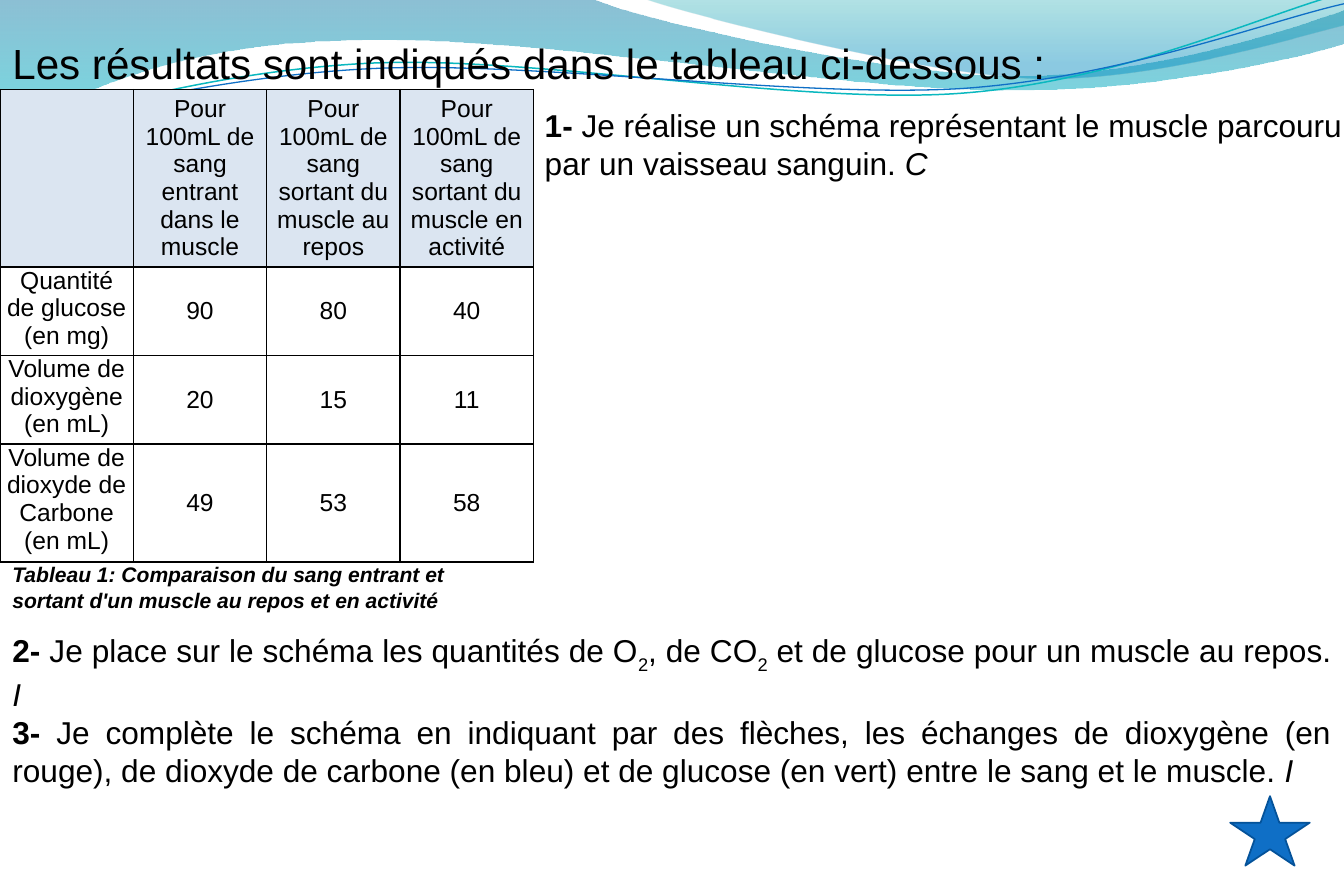
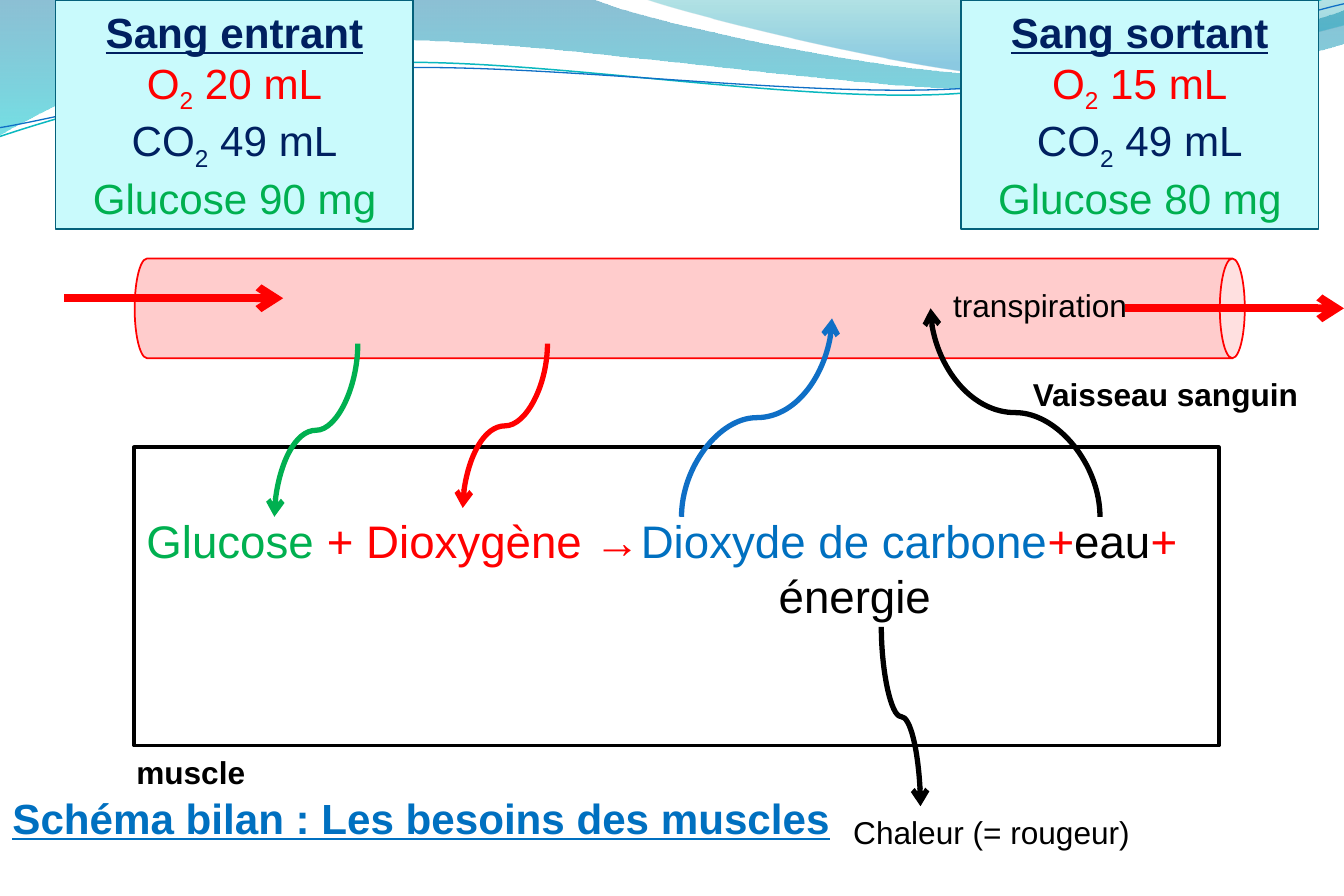
from pptx import Presentation
from pptx import util as u
from pptx.dml.color import RGBColor
from pptx.enum import shapes as kinds, text as te
from pptx.oxml import parse_xml
from pptx.oxml.ns import nsdecls, qn

BLACK = RGBColor(0, 0, 0)
RED = RGBColor(0xFF, 0, 0)
GREEN = RGBColor(0, 0xB0, 0x50)
BLUE = RGBColor(0, 0x70, 0xC0)
NAVY = RGBColor(0, 0x20, 0x60)
ACCENT = RGBColor(0x0F, 0x6F, 0xC6)
ACCENT_EDGE = RGBColor(0x04, 0x52, 0x99)
TEAL = RGBColor(0x0A, 0xB8, 0xBF)
TEAL_EDGE = RGBColor(0x04, 0x61, 0x7B)
PALE_CYAN = RGBColor(0xC9, 0xFA, 0xFC)
PINK = RGBColor(0xFF, 0xCC, 0xCC)
HEADER = RGBColor(0xDB, 0xE5, 0xF1)
FONT = "Arial"
LEFT, CENTER, JUSTIFY = te.PP_ALIGN.LEFT, te.PP_ALIGN.CENTER, te.PP_ALIGN.JUSTIFY
TOP, MIDDLE = te.MSO_ANCHOR.TOP, te.MSO_ANCHOR.MIDDLE
BOX = kinds.MSO_SHAPE.RECTANGLE

# Shared waves: start point, then straight (1 point) or cubic (3 points) pieces
BANDS = [
    ((0, 0), [[(4.68, -0.01)],
              [(5.06, 0.16), (7.05, 0.6), (8.06, 0.6)],
              [(9.07, 0.6), (10.19, 0.24), (10.63, 0.08)],
              [(10.64, 0.34)],
              [(10.45, 0.41), (9.25, 0.72), (7.93, 0.71)],
              [(6.61, 0.71), (4.06, 0.26), (2.74, 0.32)],
              [(1.37, 0.34), (0.49, 0.78), (-0.01, 1.07)],
              [(0, 0)]],
     [(0, RGBColor(0, 0x74, 0xA1), 45), (1, RGBColor(0, 0xC6, 0xCF), 55)]),
    ((5.09, -0.01), [[(5.41, 0.11), (7.25, 0.58), (8.17, 0.62)],
                     [(9.09, 0.65), (10.22, 0.3), (10.63, 0.2)],
                     [(10.63, 0)],
                     [(5.09, -0.01)]],
     [(0, RGBColor(0, 0xA1, 0xA9), 30), (0.8, RGBColor(0, 0x8B, 0xBF), 45)]),
]
STRANDS = [
    ((0, 1.08), [[(0.51, 0.91), (1.68, 0.56), (2.94, 0.5)],
                 [(4.2, 0.44), (6.3, 0.83), (7.58, 0.74)],
                 [(8.85, 0.65), (9.98, 0.12), (10.61, -0.05)]], TEAL, 0.85),
    ((0, 1.01), [[(0.5, 0.93), (1.74, 0.59), (3.01, 0.54)],
                 [(4.28, 0.49), (6.35, 0.78), (7.62, 0.7)],
                 [(8.89, 0.61), (10.01, 0.17), (10.63, 0.03)]], ACCENT, 0.75),
]

# Slide 1 content; a run is a string or (string, format)
BOLD, ITALIC = {"bold": True}, {"italic": True}
SUB2 = ("2", {"baseline": -30})
RESULTS = [
    ["", "Pour 100mL de sang entrant dans le muscle",
     "Pour 100mL de sang sortant du muscle au repos",
     "Pour 100mL de sang sortant du muscle en activité"],
    ["Quantité de glucose (en mg)", "90", "80", "40"],
    ["Volume de dioxygène (en mL)", "20", "15", "11"],
    ["Volume de dioxyde de Carbone (en mL)", "49", "53", "58"],
]
ROW_HEIGHTS = [1.27, 0.63, 0.63, 0.85]
TASK_1 = [[("1-", BOLD), " Je réalise un schéma représentant le muscle parcouru "
           "par un vaisseau sanguin. ", ("C", ITALIC)]]
TASKS_2_3 = [
    [("2-", BOLD), " Je place sur le schéma les quantités de O", SUB2, ", de CO", SUB2,
     " et de glucose pour un muscle au repos. ", ("I", ITALIC)],
    [("3-", BOLD), " Je complète le schéma en indiquant par des flèches, les échanges de "
     "dioxygène (en rouge), de dioxyde de carbone (en bleu) et de glucose (en vert) entre "
     "le sang et le muscle. ", ("I", ITALIC)],
]

# Slide 2 content; "\n" is a line break
BLOOD = [  # left, heading, O2, CO2, glucose
    (0.44, "Sang entrant", 20, 49, 90),
    (7.6, "Sang sortant", 15, 49, 80),
]
EQUATION = [
    [("Glucose ", {"color": GREEN}), ("+ Dioxygène →", {"color": RED}),
     ("Dioxyde de carbone", {"color": BLUE}), ("+", {"color": RED}), "eau",
     ("+", {"color": RED}), "\n", "énergie"],
]
FLOWS = [((0.51, 2.36), (2.24, 2.36)), ((8.9, 2.44), (10.63, 2.44))]
EXCHANGES = [
    ((2.83, 2.72), (2.17, 4.09), GREEN),
    ((4.33, 2.72), (3.66, 4.02), RED),
    ((5.39, 4.09), (6.58, 2.52), ACCENT),
    ((8.7, 4.09), (7.36, 2.44), BLACK),
    ((6.97, 4.96), (7.28, 6.38), BLACK),
]
LABELS = [
    ("Vaisseau sanguin", (8.07, 2.92, 2.32, 0.4), BOLD),
    ("transpiration", (7.44, 2.21, 1.59, 0.4), {}),
    ("Chaleur (= rougeur)", (6.65, 6.38, 2.41, 0.4), {}),
    ("Schéma bilan : Les besoins des muscles", (0, 6.22, 6.82, 0.5),
     {"size": 24, "color": BLUE, "bold": True, "underline": True}),
    ("muscle", (0.98, 5.91, 1.07, 0.4), BOLD),
]


def inches(values):
    return [u.Inches(v) for v in values]


def write(frame, paragraphs, align=LEFT, **base):
    """Fill a text frame; each run may override the base format."""
    if isinstance(paragraphs, str):
        paragraphs = [[paragraphs]]
    for i, runs in enumerate(paragraphs):
        para = frame.add_paragraph() if i else frame.paragraphs[0]
        para.alignment = align
        for item in runs:
            if item == "\n":
                para.add_line_break()
                continue
            words, extra = (item, {}) if isinstance(item, str) else item
            style = {"size": 18, "color": BLACK, **base, **extra}
            run = para.add_run()
            run.text = words
            font = run.font
            font.name, font.size = FONT, u.Pt(style["size"])
            font.color.rgb = style["color"]
            font.bold = style.get("bold", False)
            font.italic = style.get("italic", False)
            font.underline = style.get("underline", False)
            if "baseline" in style:
                run._r.get_or_add_rPr().set("baseline", str(style["baseline"] * 1000))


def add_text(slide, at, paragraphs, wrap=True, anchor=TOP, **style):
    frame = slide.shapes.add_textbox(*inches(at)).text_frame
    frame.word_wrap = wrap
    frame.vertical_anchor = anchor
    if not wrap:
        frame.auto_size = te.MSO_AUTO_SIZE.SHAPE_TO_FIT_TEXT
    write(frame, paragraphs, **style)


def paint(shape, fill, line, width=1):
    shape.shadow.inherit = False
    if fill is None:
        shape.fill.background()
    else:
        shape.fill.solid()
        shape.fill.fore_color.rgb = fill
    if line is None:
        shape.line.fill.background()
    else:
        shape.line.color.rgb = line
        shape.line.width = u.Pt(width)


def add_preset(slide, kind, at, fill, line, width=1):
    shape = slide.shapes.add_shape(kind, *inches(at))
    paint(shape, fill, line, width)
    return shape


def add_outline(slide, start, pieces, close):
    """Build a freeform on the end points, then bend its cubic pieces."""
    builder = slide.shapes.build_freeform(*inches(start))
    builder.add_line_segments([inches(piece[-1]) for piece in pieces], close=close)
    shape = builder.convert_to_shape()
    for straight, piece in zip(list(shape.element.iter(qn("a:lnTo"))), pieces):
        if len(piece) == 3:
            points = "".join(
                f'<a:pt x="{u.Inches(x) - shape.left}" y="{u.Inches(y) - shape.top}"/>'
                for x, y in piece)
            straight.getparent().replace(straight, parse_xml(
                f'<a:cubicBezTo {nsdecls("a")}>{points}</a:cubicBezTo>'))
    return shape


def add_waves(slide, layout):
    """Draw the waves and move them to the layout, which every slide uses."""
    for holder in list(layout.placeholders):
        layout.shapes.element.remove(holder.element)
    waves = []
    for start, pieces, stops in BANDS:
        band = add_outline(slide, start, pieces, True)
        paint(band, None, None)
        band.fill.gradient()
        band.fill.gradient_angle = 270
        for stop, (position, color, _) in zip(band.fill.gradient_stops, stops):
            stop.position, stop.color.rgb = position, color
        grad = band.element.spPr.find(qn("a:gradFill"))
        for color, (_, _, alpha) in zip(grad.iter(qn("a:srgbClr")), stops):
            color.append(parse_xml(f'<a:alpha {nsdecls("a")} val="{alpha * 1000}"/>'))
        waves.append(band)
    for start, pieces, color, width in STRANDS:
        strand = add_outline(slide, start, pieces, False)
        paint(strand, None, color, width)
        waves.append(strand)
    for wave in waves:
        layout.shapes.element.append(wave.element)


def add_arrow(slide, begin, end, color, width, curved=False):
    kind = kinds.MSO_CONNECTOR.CURVE if curved else kinds.MSO_CONNECTOR.STRAIGHT
    turn = 0
    if curved:  # a quarter turn makes the curve leave and arrive vertically
        cx, cy = (begin[0] + end[0]) / 2, (begin[1] + end[1]) / 2
        dx, dy = end[0] - cx, end[1] - cy
        turn, sign = (90, 1) if dx * dy < 0 else (270, -1)
        begin, end = (cx - sign * dy, cy + sign * dx), (cx + sign * dy, cy - sign * dx)
    arrow = slide.shapes.add_connector(kind, *inches(begin + end))
    arrow.line.color.rgb = color
    arrow.line.width = u.Pt(width)
    props = arrow.element.spPr
    if turn:
        props.find(qn("a:xfrm")).set("rot", str(turn * 60000))
    props.find(qn("a:ln")).append(parse_xml(f'<a:tailEnd {nsdecls("a")} type="arrow"/>'))
    props.append(parse_xml(f'<a:effectLst {nsdecls("a")}/>'))


def add_results(slide):
    table = slide.shapes.add_table(len(RESULTS), len(RESULTS[0]),
                                   *inches((0, 0.71, 4.22, sum(ROW_HEIGHTS)))).table
    table.first_row = table.horz_banding = False
    for row, height in zip(table.rows, ROW_HEIGHTS):
        row.height = u.Inches(height)
    for r, values in enumerate(RESULTS):
        for c, value in enumerate(values):
            cell = table.cell(r, c)
            cell.margin_left = cell.margin_right = u.Inches(0.05)
            cell.margin_top = cell.margin_bottom = 0
            cell.vertical_anchor = TOP if r and not c else MIDDLE
            if r:
                cell.fill.background()
            else:
                cell.fill.solid()
                cell.fill.fore_color.rgb = HEADER
            if value:
                write(cell.text_frame, value, align=CENTER, size=14)
            for i, side in enumerate(("lnL", "lnR", "lnT", "lnB")):
                cell._tc.get_or_add_tcPr().insert(i, parse_xml(
                    f'<a:{side} {nsdecls("a")} w="12700"><a:solidFill>'
                    f'<a:srgbClr val="{BLACK}"/></a:solidFill></a:{side}>'))


def build_results_slide(slide):
    add_text(slide, (0, 0.24, 8.46, 0.51),
             "Les résultats sont indiqués dans le tableau ci-dessous\u00a0:",
             wrap=False, anchor=MIDDLE, align=JUSTIFY, size=24)
    add_results(slide)
    add_text(slide, (0, 4.39, 4.21, 0.51),
             "Tableau 1: Comparaison du sang entrant et sortant d'un muscle au repos "
             "et en activité", anchor=MIDDLE, size=12, bold=True, italic=True)
    add_text(slide, (4.21, 0.79, 6.69, 0.71), TASK_1)
    add_text(slide, (0, 4.94, 10.63, 1.62), TASKS_2_3, align=JUSTIFY)
    add_preset(slide, kinds.MSO_SHAPE.STAR_5_POINT, (9.73, 6.3, 0.63, 0.55),
               ACCENT, ACCENT_EDGE)


def build_diagram_slide(slide):
    # Blood vessel and measurements
    vessel = add_preset(slide, kinds.MSO_SHAPE.CAN, (5.06, -1.95, 0.79, 8.78), PINK, RED)
    vessel.rotation = 90
    for left, heading, oxygen, dioxide, glucose in BLOOD:
        card = add_preset(slide, BOX, (left, 0, 2.83, 1.81), PALE_CYAN, TEAL_EDGE)
        red, red_sub = {"color": RED}, {"color": RED, "baseline": -25}
        write(card.text_frame, [
            [(heading, {"bold": True, "underline": True})],
            [("O", red), ("2", red_sub), (f" {oxygen} mL", red)],
            ["CO", ("2", {"baseline": -25}), f" {dioxide} mL"],
            [(f"Glucose {glucose} mg", {"color": GREEN})],
        ], align=CENTER, size=24, color=NAVY)
    for begin, end in FLOWS:
        add_arrow(slide, begin, end, RED, 4.5)

    # Muscle with its reaction; a hanging indent places the second line
    muscle = add_preset(slide, BOX, (1.06, 3.54, 8.58, 2.36), None, BLACK, 2.25)
    muscle.text_frame.margin_bottom = u.Inches(0.5)
    write(muscle.text_frame, EQUATION, size=26)
    reaction = muscle.text_frame.paragraphs[0]._p.get_or_add_pPr()
    reaction.set("marL", str(u.Inches(5)))
    reaction.set("indent", str(-u.Inches(5)))

    # Exchanges and labels
    for begin, end, color in EXCHANGES:
        add_arrow(slide, begin, end, color, 3, curved=True)
    for words, at, style in LABELS:
        add_text(slide, at, words, wrap=False, **style)


def main():
    prs = Presentation()
    prs.slide_width, prs.slide_height = inches((10.63, 7.09))
    blank = prs.slide_layouts[6]
    results, diagram = [prs.slides.add_slide(blank) for _ in range(2)]
    add_waves(results, blank)
    build_results_slide(results)
    build_diagram_slide(diagram)
    prs.save("out.pptx")


if __name__ == "__main__":
    main()
